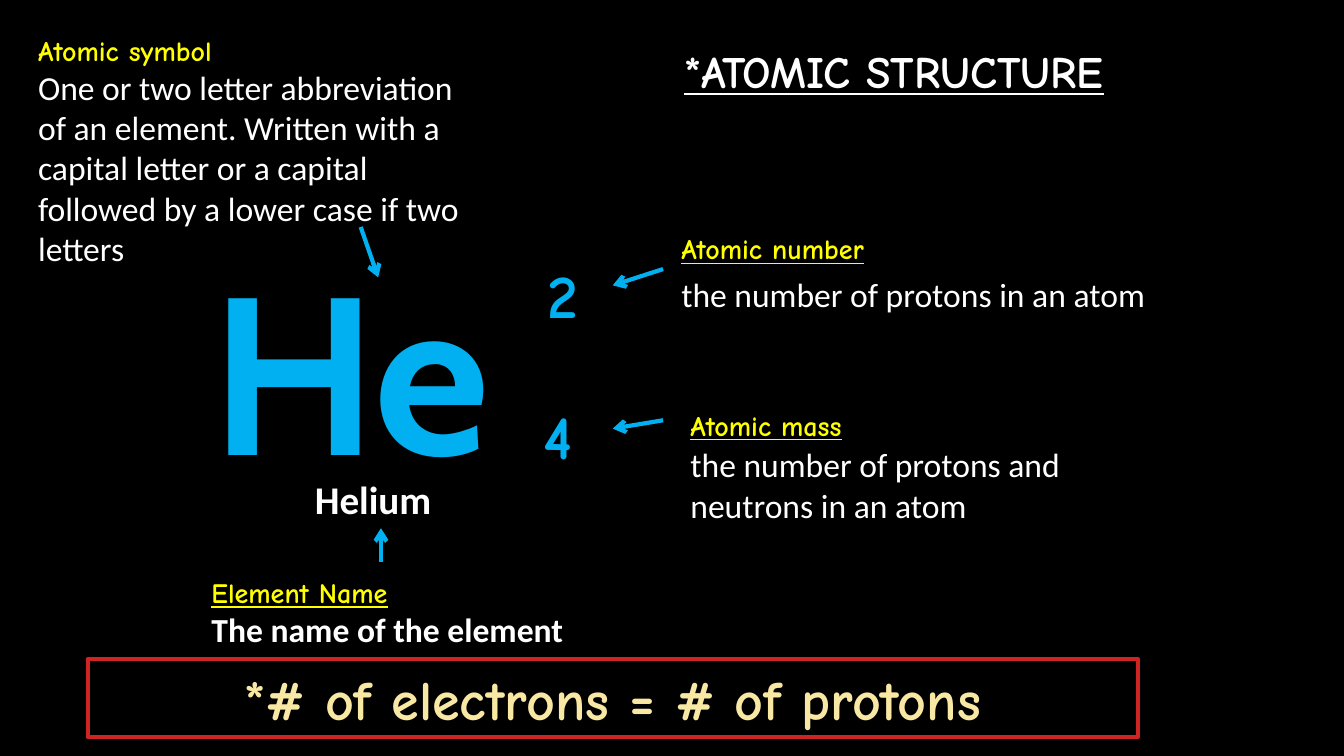
"""Build the atomic structure slide with the labelled helium symbol."""
from lxml.etree import SubElement
from pptx import Presentation
from pptx.dml.color import RGBColor as RGB
from pptx.enum.shapes import MSO_CONNECTOR as LINK, MSO_SHAPE as SHAPE
from pptx.enum.text import MSO_ANCHOR, MSO_AUTO_SIZE as AUTO, PP_ALIGN as ALIGN
from pptx.oxml.ns import qn
from pptx.util import Cm, Pt

BLACK = RGB(0x00, 0x00, 0x00)
WHITE = RGB(0xFF, 0xFF, 0xFF)
BLUE = RGB(0x00, 0xB0, 0xF0)
YELLOW = RGB(0xFF, 0xFF, 0x00)
RED = RGB(0xCE, 0x24, 0x24)
CREAM = RGB(0xF8, 0xE8, 0xA4)

COMIC = "Comic Neue"
TITLE = (COMIC, 32, WHITE, True, True)
TERM = (COMIC, 20, YELLOW, True, True)
PLAIN = (COMIC, 20, YELLOW, True, False)
BODY = ("Calibri", 24, WHITE, False, False)
STRONG = ("Calibri", 24, WHITE, True, False)
NAME = ("Calibri", 28, WHITE, True, False)
SYMBOL = ("Cabin", 160, BLUE, True, False)
COUNT = (COMIC, 44, BLUE, True, False)
RULE = (COMIC, 40, CREAM, True, False)


def write(shape, lines, align=ALIGN.LEFT):
    frame = shape.text_frame
    frame.word_wrap = True
    frame.auto_size = AUTO.SHAPE_TO_FIT_TEXT
    frame.vertical_anchor = MSO_ANCHOR.TOP
    for i, (text, style) in enumerate(lines):
        para = frame.add_paragraph() if i else frame.paragraphs[0]
        para.text = text
        para.alignment = align
        font = para.font
        font.name, size, font.color.rgb, font.bold, font.underline = style
        font.size = Pt(size)
    return frame


deck = Presentation()
deck.slide_width, deck.slide_height = Cm(33.87), Cm(19.05)
slide = deck.slides.add_slide(deck.slide_layouts[6])
slide.background.fill.solid()
slide.background.fill.fore_color.rgb = BLACK
shapes = slide.shapes

labels = [
    ((9.83, 0.97, 25.4, 1.6), [("*ATOMIC STRUCTURE", TITLE)], ALIGN.CENTER),
    ((16.92, 6.78, 12.19, 2.31), [("the number of protons in an atom", BODY)], ALIGN.LEFT),
    ((5.08, 5.72, 10.01, 7.04), [("He", SYMBOL)], ALIGN.LEFT),
    ((13.54, 6.35, 1.4, 2.11), [("2", COUNT)], ALIGN.LEFT),
    ((13.46, 9.91, 1.4, 2.11), [("4", COUNT)], ALIGN.LEFT),
    ((17.15, 10.16, 5, 1.09), [("Atomic mass", TERM)], ALIGN.LEFT),
    ((16.92, 5.72, 7.01, 1.09), [("Atomic number", TERM)], ALIGN.LEFT),
    ((0.71, 0.71, 11.33, 6.25), [
        ("Atomic symbol", PLAIN),
        ("One or two letter abbreviation of an element. Written with a capital "
         "letter or a capital followed by a lower case if two letters", BODY),
    ], ALIGN.LEFT),
    ((5.08, 14.38, 12.7, 2.13), [
        ("Element Name", TERM), ("The name of the element", STRONG),
    ], ALIGN.LEFT),
    ((5.92, 11.86, 7.19, 1.45), [("Helium ", NAME)], ALIGN.CENTER),
]
for place, lines, align in labels:
    write(shapes.add_textbox(*map(Cm, place)), lines, align)

mass = shapes.add_textbox(Cm(17.15), Cm(11.43), Cm(10.36), Cm(2.01))
frame = write(mass, [("the number of protons and", BODY), ("neutrons in an atom", BODY)])
for para in frame.paragraphs:
    para.line_spacing = 0.6
frame.paragraphs[1].space_before = Pt(12)

arrows = [
    (9.09, 5.72, 9.53, 6.99),
    (16.71, 6.78, 15.44, 7.19),
    (16.71, 10.59, 15.44, 10.8),
    (9.6, 14.15, 9.6, 13.31),
]
for ends in arrows:
    arrow = shapes.add_connector(LINK.STRAIGHT, *map(Cm, ends))
    arrow.line.color.rgb = BLUE
    arrow.line.width = Pt(3)
    props = arrow.element.spPr
    SubElement(props.find(qn("a:ln")), qn("a:tailEnd"), type="arrow")
    SubElement(props, qn("a:effectLst"))

box = shapes.add_shape(SHAPE.RECTANGLE, Cm(2.21), Cm(16.61), Cm(26.47), Cm(1.96))
box.shadow.inherit = False
box.fill.background()
box.line.color.rgb = RED
box.line.width = Pt(3)
write(box, [("*# of electrons = # of protons", RULE)], ALIGN.CENTER)

deck.save("out.pptx")
